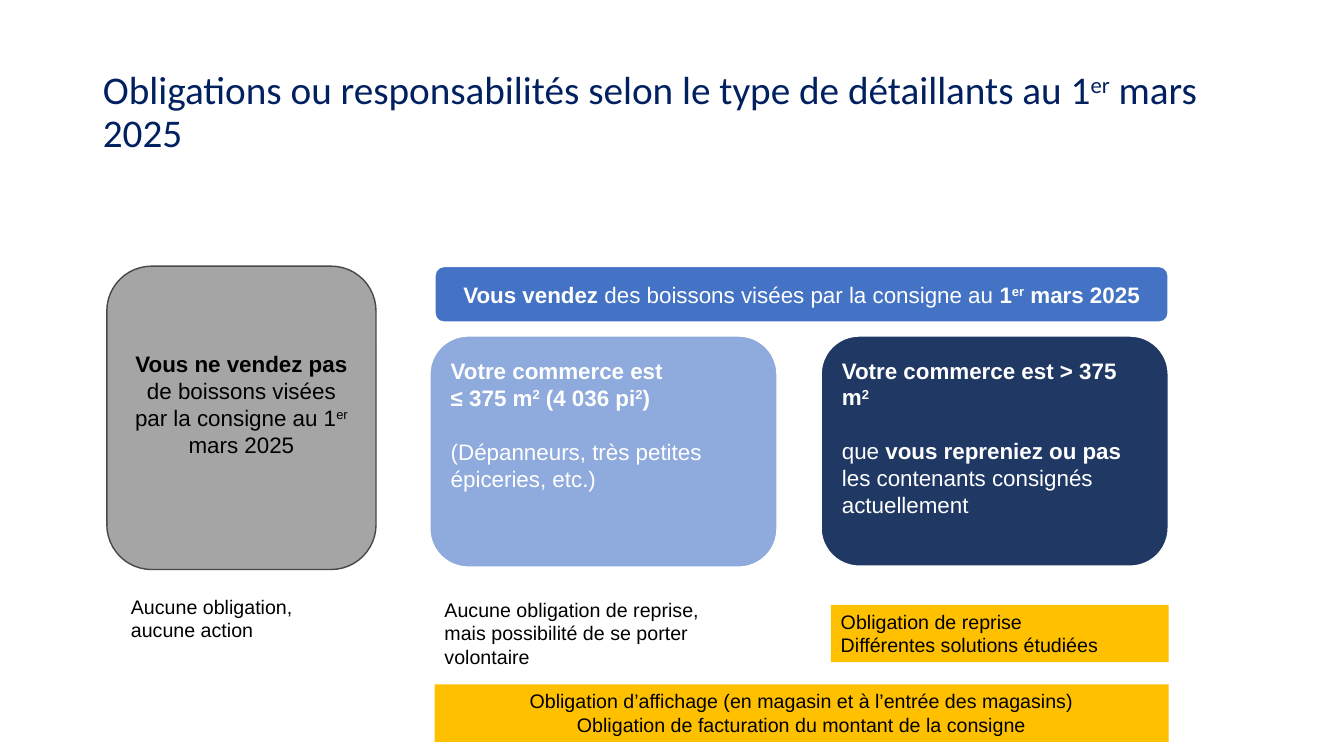
from pptx import Presentation, util as u
from pptx.dml.color import RGBColor
from pptx.enum import shapes, text

COLOURS = {
    "title": "002060", "black": "000000", "white": "FFFFFF",
    "grey": "A5A5A5", "grey_line": "484848", "banner": "4472C4",
    "small_shop": "8FAADC", "large_shop": "203864", "duty": "FFC000",
}
LINE = 0.27  # height of one 16 pt line, in inches
LEFT, MIDDLE, RIGHT, EDGE = 1.06, 4.31, 8.14, 11.59  # column starts, right edge
CARD_TOP, CARD_WIDTH = 3.33, 3.45

# Runs are (wording, style): b is bold, s is superscript.
NO_SALE = [[("Vous ne vendez pas ", "b"),
            ("de boissons visées par la consigne au 1", ""),
            ("er", "s"), (" mars 2025", "")]]
SALE = [[("Vous vendez ", "b"),
         ("des boissons visées par la consigne au ", ""),
         ("1", "b"), ("er", "bs"), (" mars 2025", "b")]]
SMALL_SHOP = [[("Votre commerce est", "b")],
              [("≤ 375 m", "b"), ("2", "bs"), (" (4 036 pi", "b"),
               ("2", "bs"), (")", "b")],
              [("(Dépanneurs, très petites épiceries, etc.)", "")]]
LARGE_SHOP = [[("Votre commerce est > 375 m", "b"), ("2", "bs")],
              [("que ", ""), ("vous repreniez ou pas ", "b"),
               ("les contenants consignés actuellement", "")]]


def colour(name):
    return RGBColor.from_string(COLOURS[name])


def add_runs(paragraph, runs, size, ink, font="Arial"):
    for wording, style in runs:
        run = paragraph.add_run()
        run.text = wording
        run.font.name = font
        run.font.size = u.Pt(size)
        run.font.bold = "b" in style
        run.font.color.rgb = colour(ink)
        if "s" in style:
            run.font._element.set("baseline", "30000")


def write(frame, paragraphs, size, ink, centred=False, gap=False):
    """Fill a frame; gap leaves one line free above the last paragraph."""
    frame.word_wrap = True
    for index, runs in enumerate(paragraphs):
        paragraph = frame.paragraphs[0] if index == 0 else frame.add_paragraph()
        paragraph.alignment = (text.PP_ALIGN.CENTER if centred
                               else text.PP_ALIGN.LEFT)
        add_runs(paragraph, runs, size, ink)
    if gap:
        paragraph.space_before = u.Inches(LINE)


def add_panel(slide, kind, box, fill, line=None, width=1.5):
    shape = slide.shapes.add_shape(kind, *map(u.Inches, box))
    shape.shadow.inherit = False
    shape.fill.solid()
    shape.fill.fore_color.rgb = colour(fill)
    if line:
        shape.line.color.rgb = colour(line)
        shape.line.width = u.Pt(width)
    else:
        shape.line.fill.background()
    return shape


def add_card(slide, box, paragraphs, fill, ink="white", line="white", width=1.5,
             centred=False, gap=False, lines_below=0):
    """Rounded box whose text is raised by the lines kept free below it."""
    shape = add_panel(slide, shapes.MSO_SHAPE.ROUNDED_RECTANGLE, box,
                      fill, line, width)
    frame = shape.text_frame
    frame.vertical_anchor = text.MSO_ANCHOR.MIDDLE
    frame.margin_bottom = u.Inches(0.05 + lines_below * LINE)
    write(frame, paragraphs, 16, ink, centred, gap)


def add_note(slide, box, lines, fill=None, centred=False):
    if fill:
        shape = add_panel(slide, shapes.MSO_SHAPE.RECTANGLE, box, fill)
    else:
        shape = slide.shapes.add_textbox(*map(u.Inches, box))
    shape.text_frame.vertical_anchor = text.MSO_ANCHOR.TOP
    write(shape.text_frame, [[(line, "")] for line in lines], 14, "black", centred)


def add_title(slide, box):
    title = slide.shapes.title
    title.left, title.top, title.width, title.height = map(u.Inches, box)
    frame = title.text_frame
    frame.word_wrap = True
    frame.auto_size = text.MSO_AUTO_SIZE.NONE
    frame.vertical_anchor = text.MSO_ANCHOR.MIDDLE
    paragraph = frame.paragraphs[0]
    paragraph.alignment = text.PP_ALIGN.LEFT
    paragraph.line_spacing = 0.9
    add_runs(paragraph, [
        ("Obligations ou responsabilités selon le type de détaillants au 1", ""),
        ("er", "s"), (" mars 2025", "")], 28, "title", "Calibri")


def add_retailer_types(slide, top):
    add_card(slide, (LEFT, top, 2.67, 3.01), NO_SALE, "grey", "black",
             "grey_line", 1, centred=True, lines_below=1)
    add_card(slide, (MIDDLE, top, EDGE - MIDDLE, 0.56), SALE, "banner",
             centred=True)
    add_card(slide, (MIDDLE - 0.05, CARD_TOP, CARD_WIDTH, 2.3), SMALL_SHOP,
             "small_shop", gap=True, lines_below=2)
    add_card(slide, (RIGHT, CARD_TOP, CARD_WIDTH, 2.29), LARGE_SHOP,
             "large_shop", gap=True, lines_below=1)


def add_obligations(slide, top):
    add_note(slide, (LEFT + 0.14, top, 2.4, 0.57),
             ["Aucune obligation, aucune action"])
    add_note(slide, (MIDDLE, top + 0.03, 2.75, 0.81),
             ["Aucune obligation de reprise, mais possibilité de se porter volontaire"])
    add_note(slide, (RIGHT + 0.1, top + 0.15, EDGE - RIGHT - 0.1, 0.57),
             ["Obligation de reprise", "Différentes solutions étudiées"], "duty")
    add_note(slide, (MIDDLE, top + 0.94, EDGE - MIDDLE, 0.57),
             ["Obligation d’affichage (en magasin et à l’entrée des magasins)",
              "Obligation de facturation du montant de la consigne"],
             "duty", centred=True)


def main():
    presentation = Presentation()
    presentation.slide_width = u.Inches(13.33)
    presentation.slide_height = u.Inches(7.5)
    slide = presentation.slides.add_slide(presentation.slide_layouts[5])
    add_title(slide, (0.92, 0.4, 11.5, 1.45))
    add_retailer_types(slide, 2.64)
    add_obligations(slide, 5.85)
    presentation.save("out.pptx")


if __name__ == "__main__":
    main()
